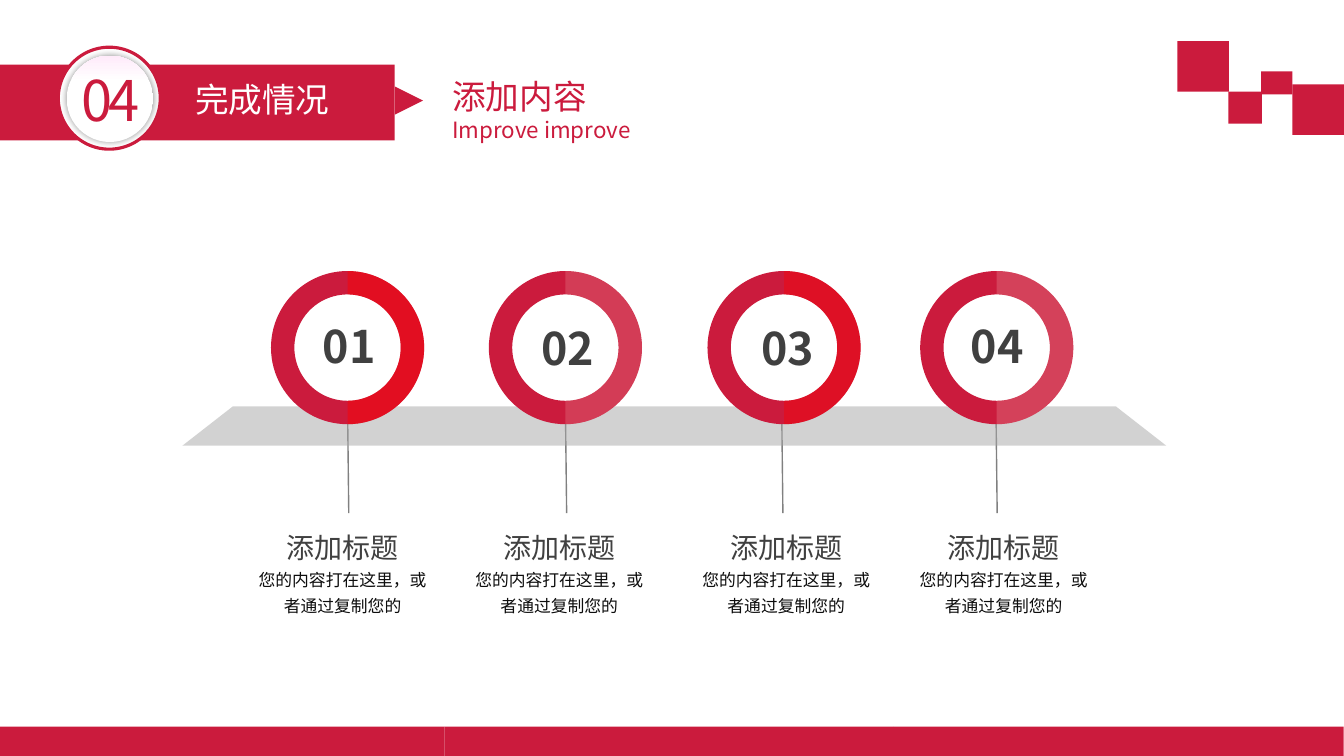
from lxml import etree
from pptx import Presentation
from pptx.dml.color import RGBColor
from pptx.enum.shapes import MSO_CONNECTOR, MSO_SHAPE
from pptx.enum.text import MSO_AUTO_SIZE, PP_ALIGN
from pptx.oxml.ns import qn
from pptx.util import Cm, Pt

RECTANGLE, OVAL, DONUT = MSO_SHAPE.RECTANGLE, MSO_SHAPE.OVAL, MSO_SHAPE.DONUT
BLOCK_ARC, TRIANGLE = MSO_SHAPE.BLOCK_ARC, MSO_SHAPE.ISOSCELES_TRIANGLE
STRAIGHT = MSO_CONNECTOR.STRAIGHT
LEFT, CENTER = PP_ALIGN.LEFT, PP_ALIGN.CENTER
GROW = MSO_AUTO_SIZE.SHAPE_TO_FIT_TEXT

CRIMSON = RGBColor(0xCB, 0x1B, 0x3D)
RED = RGBColor(0xFF, 0x00, 0x00)
CREAM = RGBColor(0xFD, 0xEA, 0xDA)
WHITE = RGBColor(0xFF, 0xFF, 0xFF)
PINK = RGBColor(0xFF, 0xEB, 0xFA)
SILVER = RGBColor(0xA6, 0xA6, 0xA6)
GRAY = RGBColor(0x80, 0x80, 0x80)
CHARCOAL = RGBColor(0x40, 0x40, 0x40)
INK = RGBColor(0x0D, 0x0D, 0x0D)
FONT = "Noto Sans CJK SC"

SECTION_NUMBER, SECTION = "04", "完成情况"
HEADING, SUBHEADING = "添加内容", "Improve improve"
STEP_TITLE = "添加标题"
STEP_BODY = "您的内容打在这里，或者通过复制您的"

# number, ring centre, stem x, number left, number top, caption left, tint, tint opacity (%)
STEPS = [
    ("01", 8.76, 8.76, 7.67, 7.90, 6.17, RED, 46),
    ("02", 14.25, 14.25, 13.18, 7.95, 11.63, CREAM, 16),
    ("03", 19.76, 19.70, 18.72, 7.95, 17.35, RED, 38),
    ("04", 25.12, 25.10, 24.00, 7.90, 22.83, CREAM, 19),
]
RING_TOP, RING_SIZE, RING_BAND = 6.83, 3.86, 0.59
STEM_TOP, STEM_BOTTOM, STEM_LEAN = 10.36, 12.93, 0.03
PLATFORM = [(4.6, 11.23), (5.87, 10.24), (28.12, 10.24), (29.39, 11.23)]
CORNER_BLOCKS = [
    (32.57, 2.13, 1.3, 1.27),
    (29.67, 1.04, 1.3, 1.27),
    (30.96, 2.31, 0.84, 0.81),
    (31.78, 1.8, 0.79, 0.58),
]
FOOTER_LEFT, FOOTER_TOP, FOOTER_PART, FOOTER_HEIGHT = -0.13, 18.31, 11.33, 0.74

prs = Presentation()
prs.slide_width, prs.slide_height = Cm(33.87), Cm(19.05)
slide = prs.slides.add_slide(prs.slide_layouts[6])
shapes = slide.shapes


def paint(shape, color, opacity=100):
    shape.shadow.inherit = False
    shape.line.fill.background()
    shape.fill.solid()
    shape.fill.fore_color.rgb = color
    if opacity < 100:
        srgb = shape.fill._xPr.find(".//" + qn("a:srgbClr"))
        etree.SubElement(srgb, qn("a:alpha"), val=str(opacity * 1000))


def add_filled(kind, left, top, width, height, color, opacity=100):
    shape = shapes.add_shape(kind, Cm(left), Cm(top), Cm(width), Cm(height))
    paint(shape, color, opacity)
    return shape


def add_text(lines, left, top, width, height, color, align=LEFT, bold=False,
             spacing=None, wrap=True, pad=0.13, tracking=0):
    """Add a text box; lines holds (text, point size) pairs, one per paragraph."""
    box = shapes.add_textbox(Cm(left), Cm(top), Cm(width), Cm(height))
    frame = box.text_frame
    frame.word_wrap = wrap
    frame.auto_size = GROW
    frame.margin_top = frame.margin_bottom = Cm(pad)
    frame.text = "\n".join(text for text, _ in lines)
    for paragraph, (_, size) in zip(frame.paragraphs, lines):
        paragraph.alignment = align
        if spacing:
            paragraph.line_spacing = spacing
        for run in paragraph.runs:
            font = run.font
            font.size, font.name, font.bold = Pt(size), FONT, bold
            font.color.rgb = color
            props = run._r.get_or_add_rPr()
            etree.SubElement(props, qn("a:ea"), typeface=FONT)
            if tracking:
                props.set("spc", str(tracking * 100))


def add_stem(x):
    stem = shapes.add_connector(
        STRAIGHT, Cm(x), Cm(STEM_TOP), Cm(x + STEM_LEAN), Cm(STEM_BOTTOM))
    stem.line.color.rgb = GRAY
    stem.line.width = Pt(1)
    etree.SubElement(stem._element.spPr, qn("a:effectLst"))


def add_ring(center, tint, opacity):
    """Add a ring whose right half carries a translucent tint."""
    place = (center - RING_SIZE / 2, RING_TOP, RING_SIZE, RING_SIZE)
    ring = add_filled(DONUT, *place, CRIMSON)
    ring.adjustments[0] = RING_BAND / RING_SIZE
    half = add_filled(BLOCK_ARC, *place, tint, opacity)
    half.adjustments[0] = 162  # 270 degrees
    half.adjustments[1] = 54   # 90 degrees
    half.adjustments[2] = RING_BAND / RING_SIZE


def add_badge():
    rim = add_filled(OVAL, 1.47, 1.19, 2.57, 2.57, WHITE)
    rim.line.color.rgb = CRIMSON
    rim.line.width = Pt(2.25)
    face = add_filled(OVAL, 1.68, 1.4, 2.18, 2.18, WHITE)
    face.fill.gradient()
    face.fill.gradient_angle = 90
    for stop, color, position in zip(face.fill.gradient_stops, (WHITE, PINK), (0.7, 1)):
        stop.color.rgb = color
        stop.position = position
    effects = face._element.spPr.find(qn("a:effectLst"))
    shadow = etree.SubElement(effects, qn("a:outerShdw"), blurRad=str(Pt(5)), dist="0", dir="0")
    black = etree.SubElement(shadow, qn("a:srgbClr"), val="000000")
    etree.SubElement(black, qn("a:alpha"), val="40000")
    add_text([(SECTION_NUMBER, 40)], 1.8, 1.52, 2.46, 1.96, CRIMSON, wrap=False, tracking=-3)


for _, _, stem_x, _, _, caption_left, _, _ in STEPS:
    add_stem(stem_x)
    add_text([(STEP_BODY, 12)], caption_left, 14.07, 4.93, 1.6, INK, CENTER, spacing=1.3)
    add_text([(STEP_TITLE, 20)], caption_left, 12.95, 4.93, 1.14, CHARCOAL, CENTER,
             spacing=1.5, pad=0)

corners = [(Cm(x), Cm(y)) for x, y in PLATFORM]
outline = shapes.build_freeform(*corners[0])
outline.add_line_segments(corners[1:])
paint(outline.convert_to_shape(), SILVER, 50)

for number, center, _, number_left, number_top, _, tint, opacity in STEPS:
    add_ring(center, tint, opacity)
    add_text([(number, 32)], number_left, number_top, 2.26, 1.63, CHARCOAL, CENTER, bold=True)

add_filled(RECTANGLE, -0.08, 1.63, 10.03, 1.91, CRIMSON)
add_filled(TRIANGLE, 9.95, 2.18, 0.71, 0.71, CRIMSON).rotation = 90
add_badge()
add_text([(SECTION, 24)], 4.67, 1.85, 5.28, 1.27, WHITE, wrap=False)
add_text([(HEADING, 24), (SUBHEADING, 16)], 11.15, 1.78, 5.05, 1.96, CRIMSON, wrap=False)

for block in CORNER_BLOCKS:
    add_filled(RECTANGLE, *block, CRIMSON)
for part in range(3):
    add_filled(RECTANGLE, FOOTER_LEFT + part * FOOTER_PART, FOOTER_TOP,
               FOOTER_PART, FOOTER_HEIGHT, CRIMSON)

prs.save("out.pptx")
